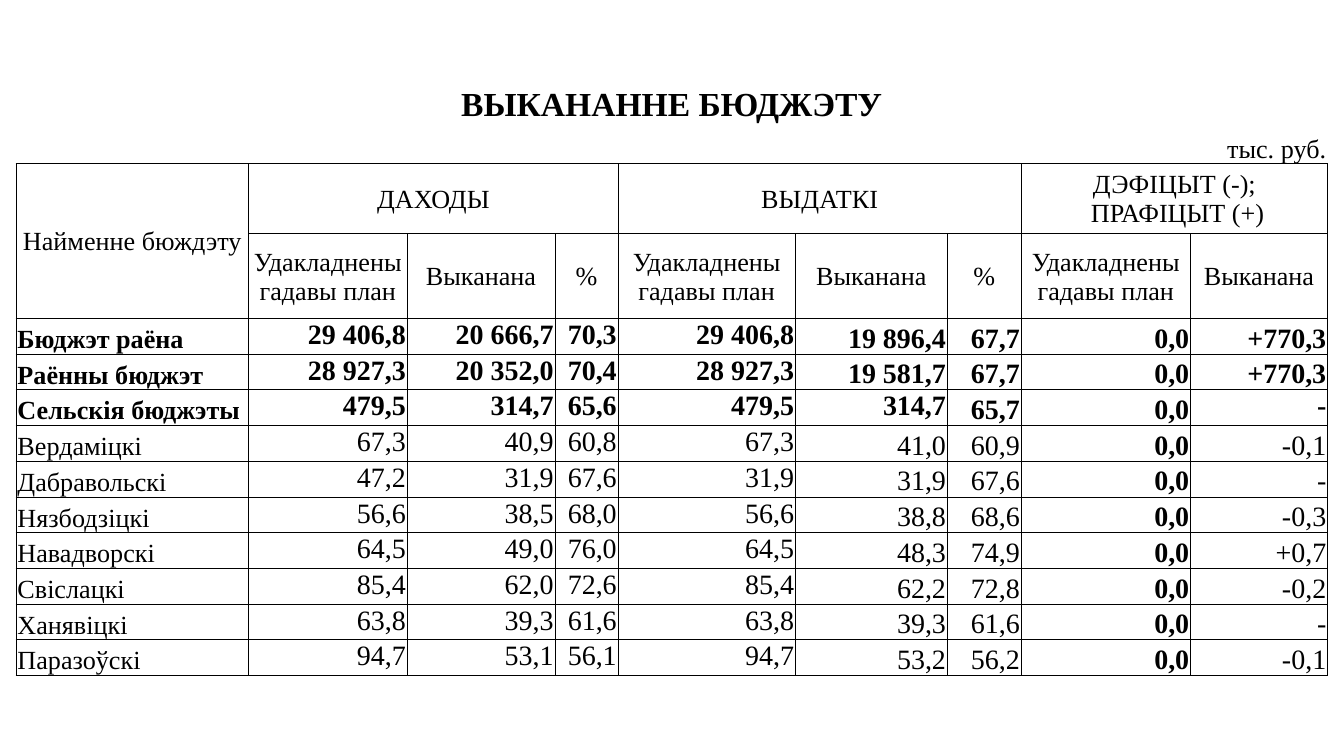
from lxml.etree import SubElement
from pptx import Presentation
from pptx.dml.color import RGBColor
from pptx.enum.text import MSO_ANCHOR, PP_ALIGN
from pptx.oxml.ns import qn
from pptx.util import Inches, Pt

BLACK = RGBColor(0, 0, 0)
FONT = "Times New Roman"
WIDTH = Inches(10)
HEIGHT = WIDTH * 9 // 16
LEFT, TOP = 0.12, 0.61
COLS = [1.73, 1.01, 0.17, 0.73, 0.37, 0.47, 1.32,
        0.9, 0.23, 0.55, 1.26, 0.12, 0.9]
ROWS = [0.34, 0.27, 0.52, 0.63] + [2.66 / 10] * 10
HEAD = 4
SPANS = {0: 1, 1: 2, 3: 2, 5: 1, 6: 1, 7: 2, 9: 1, 10: 1, 11: 2}
PLAN, DONE = "Удакладнены гадавы план", "Выканана"
LABELS = [PLAN, DONE, "%", PLAN, DONE, "%", PLAN, DONE]
GROUPS = [(1, 5, "ДАХОДЫ"), (6, 4, "ВЫДАТКІ"),
          (10, 3, "ДЭФІЦЫТ (-);\n ПРАФІЦЫТ (+)")]
TOTALS = 3
ZERO = 10
HIGH = {1, 3, 5, 6}
RAISED = {(6, 7), (6, 11)}
DATA = [
    "Бюджэт раёна|29 406,8|20 666,7|70,3|29 406,8|19 896,4|67,7|0,0|+770,3",
    "Раённы бюджэт|28 927,3|20 352,0|70,4|28 927,3|19 581,7|67,7|0,0|+770,3",
    "Сельскія бюджэты|479,5|314,7|65,6|479,5|314,7|65,7|0,0|-",
    "Вердаміцкі|67,3|40,9|60,8|67,3|41,0|60,9|0,0|-0,1",
    "Дабравольскі|47,2|31,9|67,6|31,9|31,9|67,6|0,0|-",
    "Нязбодзіцкі|56,6|38,5|68,0|56,6|38,8|68,6|0,0|-0,3",
    "Навадворскі|64,5|49,0|76,0|64,5|48,3|74,9|0,0|+0,7",
    "Свіслацкі|85,4|62,0|72,6|85,4|62,2|72,8|0,0|-0,2",
    "Ханявіцкі|63,8|39,3|61,6|63,8|39,3|61,6|0,0|-",
    "Паразоўскі|94,7|53,1|56,1|94,7|53,2|56,2|0,0|-0,1",
]


def rule(cell, shown):
    props = cell._tc.get_or_add_tcPr()
    for spot, side in enumerate(("L", "R", "T", "B")):
        line = SubElement(props, qn(f"a:ln{side}"), w=str(Pt(0.5)))
        if side in shown:
            fill = SubElement(line, qn("a:solidFill"))
            SubElement(fill, qn("a:srgbClr"), val=str(BLACK))
        else:
            SubElement(line, qn("a:noFill"))
        props.insert(spot, line)


def write(cell, text, size=14, bold=False, align=PP_ALIGN.CENTER,
          anchor=MSO_ANCHOR.MIDDLE):
    cell.vertical_anchor = anchor
    cell.text = text
    for para in cell.text_frame.paragraphs:
        para.alignment = align
        font = para.font
        font.name, font.size, font.bold = FONT, Pt(size), bold
        font.color.rgb = BLACK


def join(grid, row, col, wide, high=1):
    cell = grid.cell(row, col)
    if wide * high > 1:
        cell.merge(grid.cell(row + high - 1, col + wide - 1))
    return cell


def make_grid(slide):
    frame = slide.shapes.add_table(
        len(ROWS), len(COLS), Inches(LEFT), Inches(TOP),
        Inches(sum(COLS)), Inches(sum(ROWS)))
    grid = frame.table
    grid.first_row = grid.horz_banding = False
    for col, width in zip(grid.columns, COLS):
        col.width = Inches(width)
    for index, (row, height) in enumerate(zip(grid.rows, ROWS)):
        row.height = Inches(height)
        shown = ("", "B")[index] if index < 2 else "LRTB"
        for cell in row.cells:
            cell.margin_left = cell.margin_right = Inches(0.01)
            cell.margin_top, cell.margin_bottom = Inches(0.01), 0
            cell.fill.background()
            rule(cell, shown)
            write(cell, "", 10)
    return grid


def fill_head(grid):
    write(join(grid, 0, 0, len(COLS)), "ВЫКАНАННЕ БЮДЖЭТУ", 18, True)
    for col in (2, 4, 8, 10):
        join(grid, 1, col, 2)
    write(grid.cell(1, len(COLS) - 1), "тыс. руб.",
          align=PP_ALIGN.RIGHT, anchor=MSO_ANCHOR.BOTTOM)
    write(join(grid, 2, 0, 1, 2), "Найменне бюждэту")
    for col, wide, text in GROUPS:
        write(join(grid, 2, col, wide), text)
    for col, text in zip(list(SPANS)[1:], LABELS):
        write(join(grid, 3, col, SPANS[col]), text)


def fill_body(grid):
    for row, line in enumerate(DATA, HEAD):
        for (col, wide), text in zip(SPANS.items(), line.split("|")):
            top = col in HIGH or (row, col) in RAISED
            write(join(grid, row, col, wide), text,
                  size=15 if col else 14,
                  bold=row < HEAD + TOTALS or col == ZERO,
                  align=PP_ALIGN.RIGHT if col else PP_ALIGN.LEFT,
                  anchor=MSO_ANCHOR.TOP if top else MSO_ANCHOR.BOTTOM)


def main():
    deck = Presentation()
    deck.slide_width, deck.slide_height = WIDTH, HEIGHT
    slide = deck.slides.add_slide(deck.slide_layouts[6])
    grid = make_grid(slide)
    fill_head(grid)
    fill_body(grid)
    deck.save("out.pptx")


if __name__ == "__main__":
    main()
